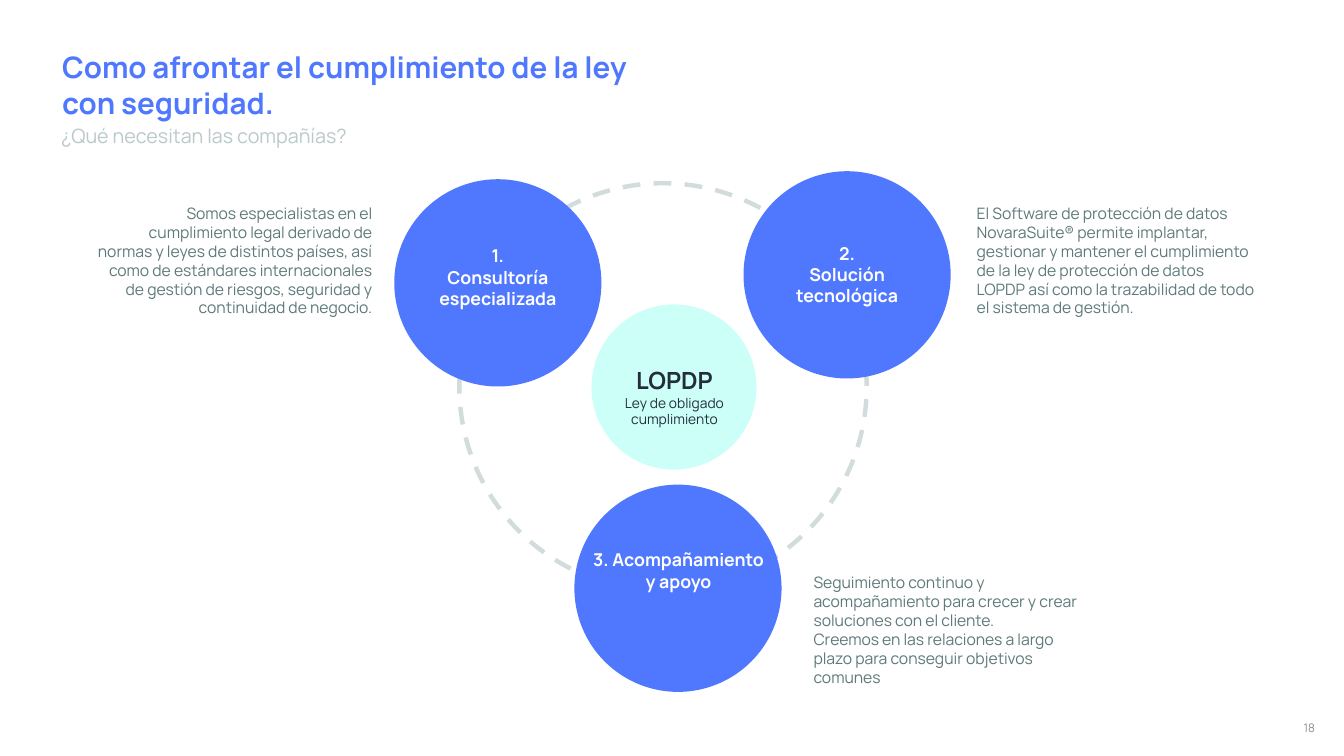
from lxml import etree
from pptx import Presentation, util as u
from pptx.dml.color import RGBColor
from pptx.enum import dml, shapes, text

PX = 12915
W, H = 1343, 755
FONT = "Manrope"
BLUE, MINT, RING, WHITE = "5078FF", "CCFFF7", "D2DCDC", "FFFFFF"
PALE, INK, BODY, GREY = "BAC9C9", "232D3C", "5E7979", "8D8F92"
DISC, NOTE_W = 207, 292
LEFT, CENTER, RIGHT = text.PP_ALIGN.LEFT, text.PP_ALIGN.CENTER, text.PP_ALIGN.RIGHT

HEADINGS = [
    ((62, 49, 610, 35), "Como afrontar el cumplimiento de la ley con seguridad.",
     dict(size=30, color=BLUE, bold=True)),
    ((61, 124, 610, 24), "¿Qué necesitan las compañías?", dict(size=20, color=PALE)),
    ((1262, 720, 52, 12), "18", dict(size=12, color=GREY, align=RIGHT)),
]
DISCS = [
    ((394, 179), ["1.", "Consultoría especializada"], 15),
    ((743, 171), ["2.", "Solución tecnológica"], 4),
    ((574, 484), [], 4),
]
NOTES = [
    ((87, 200, 141), RIGHT, [
        "Somos especialistas en el cumplimiento legal derivado de normas y leyes de "
        "distintos países, así como de estándares internacionales de gestión de riesgos, "
        "seguridad y continuidad de negocio."]),
    ((969, 200, 141), LEFT, [
        "El Software de protección de datos NovaraSuite® permite implantar, gestionar y "
        "mantener el cumplimiento de la ley de protección de datos LOPDP así como la "
        "trazabilidad de todo el sistema de gestión."]),
    ((806, 569, 122), LEFT, [
        "Seguimiento continuo y acompañamiento para crecer y crear soluciones con el cliente.",
        "Creemos en las relaciones a largo plazo para conseguir objetivos comunes"]),
]

prs = Presentation()
prs.slide_width, prs.slide_height = W * PX, H * PX
s = prs.slides.add_slide(prs.slide_layouts[6])


def rgb(color):
    return RGBColor.from_string(color)


def write(tf, line, size, color, bold=False, align=LEFT):
    p = tf.paragraphs[0]
    if p.runs:
        p = tf.add_paragraph()
    p.alignment = align
    r = p.add_run()
    r.text = line
    r.font.name, r.font.size, r.font.bold = FONT, u.Pt(size), bold
    r.font.color.rgb = rgb(color)


def text_box(box, pad=True):
    tf = s.shapes.add_textbox(*(v * PX for v in box)).text_frame
    tf.word_wrap = True
    if not pad:
        tf.margin_left = tf.margin_right = tf.margin_top = tf.margin_bottom = 0
    return tf


def circle(x, y, size, fill=None):
    sp = s.shapes.add_shape(shapes.MSO_SHAPE.OVAL, x * PX, y * PX, size * PX, size * PX)
    sp.shadow.inherit = False
    sp.line.fill.background()
    if fill:
        sp.fill.solid()
        sp.fill.fore_color.rgb = rgb(fill)
    else:
        sp.fill.background()
    return sp


circle(591, 304, 165, MINT)
ring = circle(459, 183, 407)
ring.line.color.rgb = rgb(RING)
ring.line.width = u.Pt(4.5)
ring.line.dash_style = dml.MSO_LINE.DASH

for box, line, style in HEADINGS:
    write(text_box(box, pad=False), line, **style)

label = dict(size=18, color=WHITE, bold=True, align=CENTER)
for (x, y), lines, bottom in DISCS:
    tf = circle(x, y, DISC, BLUE).text_frame
    tf.word_wrap = True
    tf.vertical_anchor = text.MSO_ANCHOR.MIDDLE
    tf.margin_bottom = bottom * PX
    for line in lines:
        write(tf, line, **label)
write(text_box((579, 545, 198, 72)), "3. Acompañamiento y apoyo", **label)

tf = text_box((574, 362, 200, 69))
write(tf, "LOPDP", 24, INK, bold=True, align=CENTER)
write(tf, "Ley de obligado cumplimiento", 14, INK, align=CENTER)

for (x, y, h), align, lines in NOTES:
    tf = text_box((x, y, NOTE_W, h))
    for line in lines:
        write(tf, line, 16, BODY, align=align)

prs.save("out.pptx")
